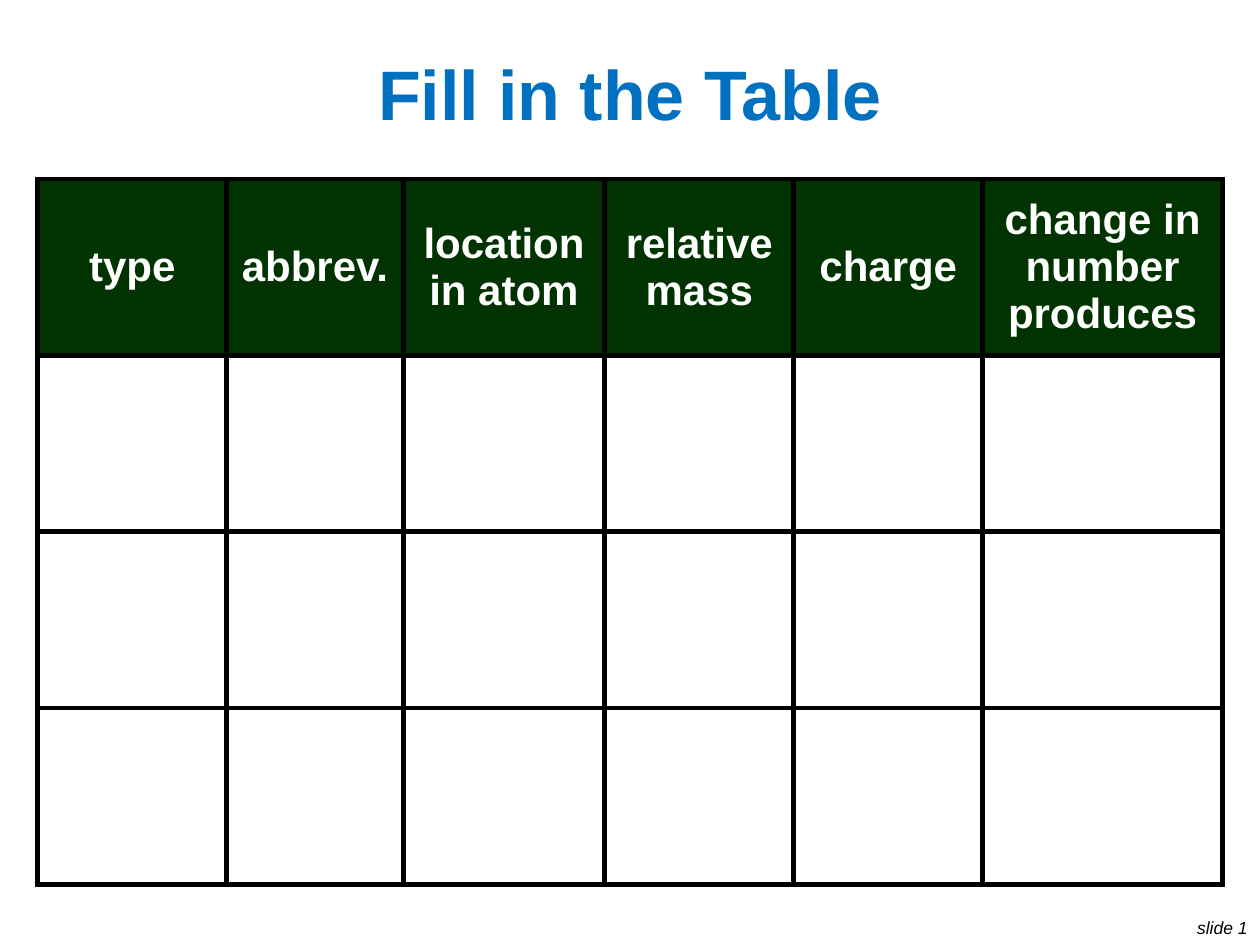
from dataclasses import dataclass

from lxml.etree import SubElement
from pptx import Presentation
from pptx.dml.color import RGBColor
from pptx.enum.text import MSO_ANCHOR, PP_ALIGN
from pptx.oxml.ns import qn
from pptx.util import Inches, Pt

WIDTH, HEIGHT = 10, 7.5
ROWS, ROW_HEIGHT = 4, 1.4
BLACK, WHITE, BLUE, GREEN = "000000", "FFFFFF", "0070C0", "003300"


@dataclass(frozen=True)
class Column:
    head: str
    width: float


@dataclass(frozen=True)
class Label:
    text: str
    left: float
    top: float
    width: float
    height: float
    align: PP_ALIGN
    wrap: bool
    font: dict


COLUMNS = [
    Column("type", 1.5),
    Column("abbrev.", 1.4),
    Column("location in atom", 1.6),
    Column("relative mass", 1.5),
    Column("charge", 1.5),
    Column("change in number produces", 1.9),
]
HEAD_FONT = {"size": Pt(24), "bold": True, "color": WHITE}
LABELS = [
    Label("slide 1", 0.93 * WIDTH, 0.964 * HEIGHT, 0.07 * WIDTH, 0.036 * HEIGHT,
          PP_ALIGN.RIGHT, False,
          {"size": Pt(10), "italic": True, "color": BLACK}),
    Label("Fill in the Table", 0.05 * WIDTH, 0.04 * HEIGHT, 0.9 * WIDTH,
          0.116 * HEIGHT, PP_ALIGN.CENTER, True,
          {"size": Pt(40), "bold": True, "color": BLUE}),
]


def paint(target, color: str) -> None:
    """Set the colour of a fill or a font."""
    if hasattr(target, "solid"):
        target.solid()
        target.fore_color.rgb = RGBColor.from_string(color)
    else:
        target.color.rgb = RGBColor.from_string(color)


def write(frame, text: str, align: PP_ALIGN, style: dict) -> None:
    para = frame.paragraphs[0]
    para.alignment = align
    run = para.add_run()
    run.text = text
    run.font.name = "Arial"
    for name, value in style.items():
        if name == "color":
            paint(run.font, value)
        else:
            setattr(run.font, name, value)


def add_label(slide, label: Label) -> None:
    box = slide.shapes.add_textbox(
        *map(Inches, (label.left, label.top, label.width, label.height)))
    frame = box.text_frame
    frame.word_wrap = label.wrap
    frame.vertical_anchor = MSO_ANCHOR.MIDDLE
    write(frame, label.text, label.align, label.font)


def add_border(cell, color: str, width: float) -> None:
    props = cell._tc.get_or_add_tcPr()
    for side in ("a:lnL", "a:lnR", "a:lnT", "a:lnB"):
        line = SubElement(props, qn(side), w=str(Pt(width)))
        fill = SubElement(line, qn("a:solidFill"))
        SubElement(fill, qn("a:srgbClr"), val=color)


def add_grid(slide, top: float) -> None:
    width = sum(column.width for column in COLUMNS)
    table = slide.shapes.add_table(
        ROWS, len(COLUMNS), Inches((WIDTH - width) / 2), Inches(top),
        Inches(width), Inches(ROWS * ROW_HEIGHT)).table
    table.first_row = table.horz_banding = False
    for row in table.rows:
        row.height = Inches(ROW_HEIGHT)
    for cell in table.iter_cells():
        add_border(cell, BLACK, 3)
        cell.fill.background()
    for index, column in enumerate(COLUMNS):
        table.columns[index].width = Inches(column.width)
        cell = table.cell(0, index)
        paint(cell.fill, GREEN)
        cell.vertical_anchor = MSO_ANCHOR.MIDDLE
        write(cell.text_frame, column.head, PP_ALIGN.CENTER, HEAD_FONT)


def main() -> None:
    deck = Presentation()
    deck.slide_width, deck.slide_height = Inches(WIDTH), Inches(HEIGHT)
    slide = deck.slides.add_slide(deck.slide_layouts[6])
    paint(slide.background.fill, WHITE)
    for label in LABELS:
        add_label(slide, label)
    add_grid(slide, 1.42)
    deck.save("out.pptx")


if __name__ == "__main__":
    main()
